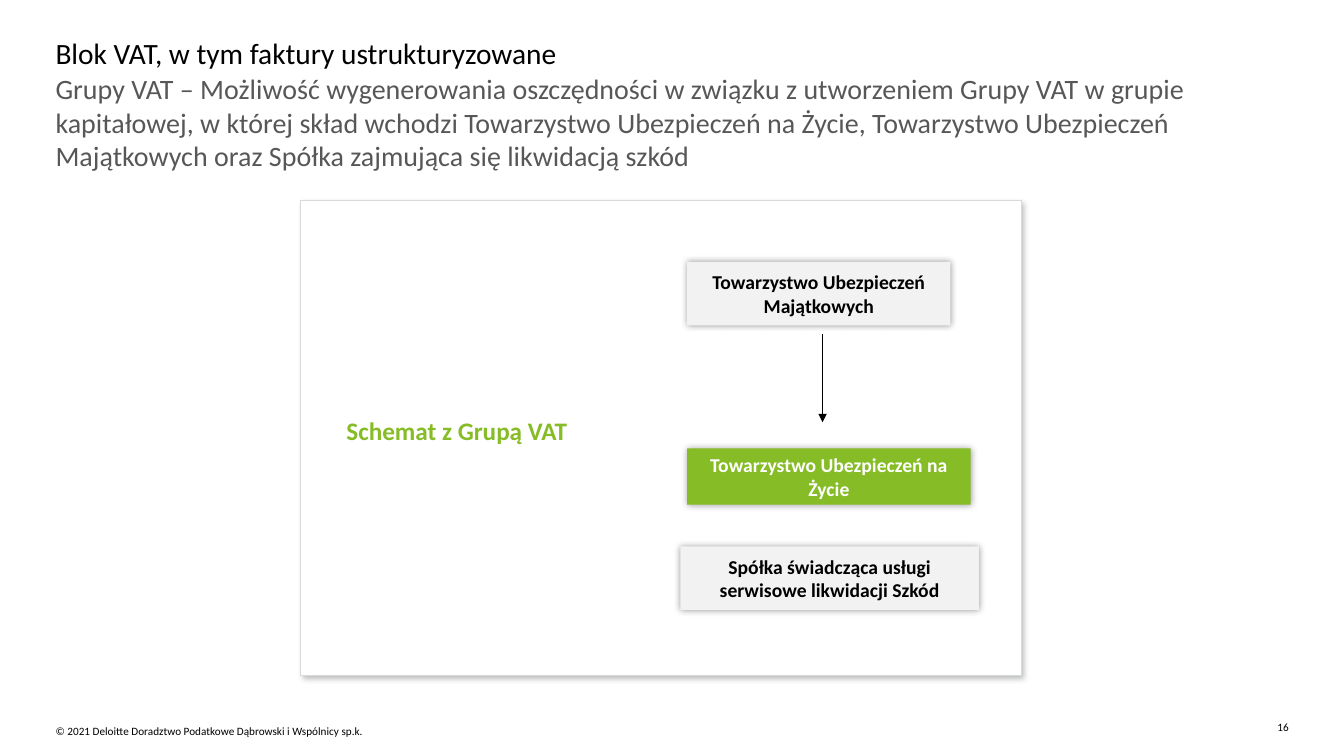
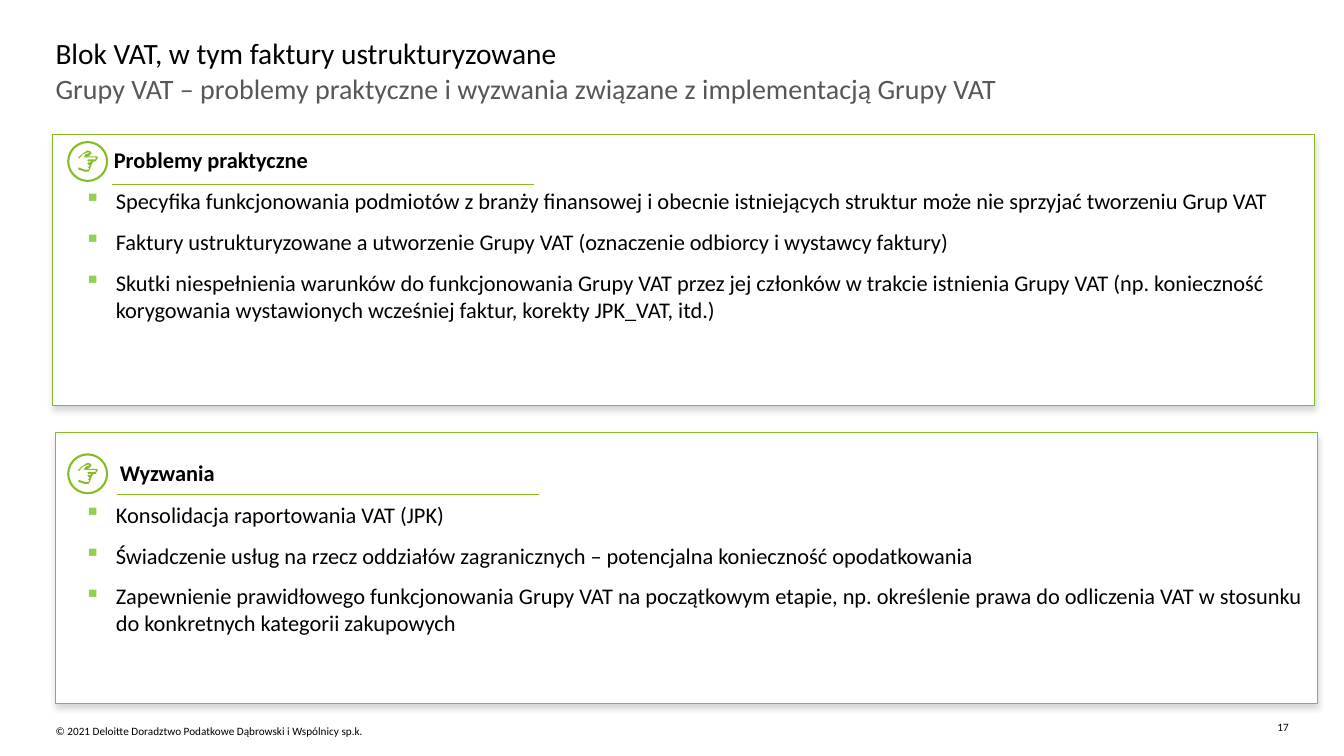
"""Build two slides about VAT groups: a structure diagram and two panels of issues."""
from dataclasses import dataclass

from lxml.etree import SubElement
from pptx import Presentation
from pptx.dml.color import RGBColor
from pptx.enum.shapes import MSO_CONNECTOR as Connector, MSO_SHAPE as Shape
from pptx.enum.text import MSO_ANCHOR as Anchor, PP_ALIGN as Align
from pptx.oxml.ns import qn
from pptx.util import Cm, Pt


@dataclass(frozen=True)
class Theme:
    font: str = "Calibri"
    black: str = "000000"
    white: str = "FFFFFF"
    gray: str = "575757"
    pale: str = "F2F2F2"
    border: str = "D9D9D9"
    green: str = "86BC25"
    bullet: str = "92D050"
    title_size: float = 21
    subtitle_size: float = 20
    label_size: float = 18
    body_size: float = 16
    node_size: float = 14
    footer_size: float = 8
    frame_shadow: tuple = ("53565A", 40, 4, 3, 45)
    node_shadow: tuple = ("000000", 40, 5, 0, 0)
    panel_shadow: tuple = ("6A6A65", 27, 4, 3, 90)


theme = Theme()
color = RGBColor.from_string


def write(box, lines, size, tint, bold=False, align=Align.LEFT, inset=0, bullets=False):
    """Fill a box with one paragraph per line, in one style."""
    frame = box.text_frame
    frame.word_wrap = True
    frame.margin_left = frame.margin_right = Cm(inset)
    frame.margin_top = frame.margin_bottom = Cm(min(inset, 0.13))
    for index, line in enumerate(lines):
        para = frame.paragraphs[0] if index == 0 else frame.add_paragraph()
        para.alignment = align
        if bullets:
            props = para._p.get_or_add_pPr()
            props.set("marL", str(Cm(0.79)))
            props.set("indent", str(-Cm(0.79)))
            SubElement(SubElement(props, qn("a:buClr")), qn("a:srgbClr"), val=theme.bullet)
            SubElement(props, qn("a:buChar"), char="▪")
            para.space_after = Pt(10)
        span = para.add_run()
        span.text = line
        span.font.name = theme.font
        span.font.size = Pt(size)
        span.font.bold = bold
        span.font.color.rgb = color(tint)


def set_effects(shape, shadow=None):
    """Replace the inherited shadow with the given one, or with none."""
    effects = SubElement(shape.element.spPr, qn("a:effectLst"))
    if shadow:
        tint, alpha, blur, distance, angle = shadow
        outer = SubElement(effects, qn("a:outerShdw"), blurRad=str(Pt(blur)),
                           dist=str(Pt(distance)), dir=str(angle * 60000),
                           algn="ctr", rotWithShape="0")
        shade = SubElement(outer, qn("a:srgbClr"), val=tint)
        SubElement(shade, qn("a:alpha"), val=str(alpha * 1000))


deck = Presentation()
deck.slide_width, deck.slide_height = Cm(33.87), Cm(19.05)

title = "Blok VAT, w tym faktury ustrukturyzowane"
subtitles = [
    "Grupy VAT – Możliwość wygenerowania oszczędności w związku z utworzeniem Grupy VAT "
    "w grupie kapitałowej, w której skład wchodzi Towarzystwo Ubezpieczeń na Życie, "
    "Towarzystwo Ubezpieczeń Majątkowych oraz Spółka zajmująca się likwidacją szkód",
    "Grupy VAT – problemy praktyczne i wyzwania związane z implementacją Grupy VAT",
]
copyright_line = "© 2021 Deloitte Doradztwo Podatkowe Dąbrowski i Wspólnicy sp.k."

pages = []
for number, subtitle in enumerate(subtitles, start=16):
    page = deck.slides.add_slide(deck.slide_layouts[6])
    pages.append(page)
    for text, left, top, width, height, size, tint, align in [
        (title, 1.4, 0.89, 31.09, 0.94, theme.title_size, theme.black, Align.LEFT),
        (subtitle, 1.4, 1.8, 31.09, 1.19, theme.subtitle_size, theme.gray, Align.LEFT),
        (copyright_line, 1.4, 18.24, 14.88, 0.56, theme.footer_size, theme.black, Align.LEFT),
        (str(number), 31.62, 18.16, 0.86, 0.33, theme.footer_size, theme.black, Align.RIGHT),
    ]:
        box = page.shapes.add_textbox(Cm(left), Cm(top), Cm(width), Cm(height))
        write(box, [text], size, tint, align=align)

diagram_page, issues_page = pages

frame_box = diagram_page.shapes.add_shape(
    Shape.RECTANGLE, Cm(7.57), Cm(5.05), Cm(18.16), Cm(11.96))
frame_box.fill.solid()
frame_box.fill.fore_color.rgb = color(theme.white)
frame_box.line.color.rgb = color(theme.border)
frame_box.line.width = Pt(0.5)
set_effects(frame_box, theme.frame_shadow)

label = diagram_page.shapes.add_textbox(Cm(8.48), Cm(10.34), Cm(8.43), Cm(1.02))
write(label, ["Schemat z Grupą VAT"], theme.label_size, theme.green, bold=True, inset=0.25)

for text, left, top, width, height, fill, tint, inset in [
    ("Towarzystwo Ubezpieczeń Majątkowych",
     17.32, 6.6, 6.63, 1.6, theme.pale, theme.black, 0.25),
    ("Towarzystwo Ubezpieczeń na Życie",
     17.32, 11.3, 7.14, 1.42, theme.green, theme.white, 0.1),
    ("Spółka świadcząca usługi serwisowe likwidacji Szkód",
     17.15, 13.77, 7.52, 1.6, theme.pale, theme.black, 0.1),
]:
    node = diagram_page.shapes.add_shape(
        Shape.RECTANGLE, Cm(left), Cm(top), Cm(width), Cm(height))
    node.fill.solid()
    node.fill.fore_color.rgb = color(fill)
    node.line.fill.background()
    set_effects(node, theme.node_shadow)
    node.text_frame.vertical_anchor = Anchor.MIDDLE
    write(node, [text], theme.node_size, tint, bold=True, align=Align.CENTER, inset=inset)

arrow = diagram_page.shapes.add_connector(
    Connector.STRAIGHT, Cm(20.73), Cm(8.41), Cm(20.73), Cm(10.64))
arrow.line.color.rgb = color(theme.black)
arrow.line.width = Pt(0.75)
SubElement(arrow.element.spPr.find(qn("a:ln")), qn("a:tailEnd"), type="triangle")
set_effects(arrow)

hand_outline = [
    (20, 8), (18, 11), (16, 11), (14, 14), (14, 15), (13, 17), (13, 18), (11, 21), (7, 21),
    (4, 20.5), (1, 19), (1, 17), (2, 17), (4, 18.5), (7, 19), (11, 19), (12, 18), (11, 17),
    (10, 16), (11, 16), (12, 16), (12, 15), (11, 14), (10, 13), (11, 12), (13, 12), (14, 11),
    (13, 11), (11, 11), (10, 10), (11, 9), (18, 9), (18, 8), (18, 7), (7, 7), (7, 6),
    (8, 4.5), (11, 3), (12, 2), (10, 2), (5, 4.5), (2, 8), (1, 8), (1, 7), (4, 3.5),
    (10, 0), (13, 1), (13.5, 3), (12, 5), (10, 6), (18, 6), (19.5, 6.5),
]
panels = [
    ("Problemy praktyczne", 1.32, 3.38, 3.56, 2.87, 3.68, 2.82, 4.65, 4.72, [
        "Specyfika funkcjonowania podmiotów z branży finansowej i obecnie istniejących "
        "struktur może nie sprzyjać tworzeniu Grup VAT",
        "Faktury ustrukturyzowane a utworzenie Grupy VAT (oznaczenie odbiorcy i wystawcy faktury)",
        "Skutki niespełnienia warunków do funkcjonowania Grupy VAT przez jej członków w trakcie "
        "istnienia Grupy VAT (np. konieczność korygowania wystawionych wcześniej faktur, "
        "korekty JPK_VAT, itd.)",
    ]),
    ("Wyzwania", 1.4, 10.9, 11.43, 3.02, 11.58, 2.95, 12.45, 12.62, [
        "Konsolidacja raportowania VAT (JPK)",
        "Świadczenie usług na rzecz oddziałów zagranicznych – potencjalna konieczność opodatkowania",
        "Zapewnienie prawidłowego funkcjonowania Grupy VAT na początkowym etapie, np. określenie "
        "prawa do odliczenia VAT w stosunku do konkretnych kategorii zakupowych",
    ]),
]
for (heading, left, top, icon_top, heading_left, heading_top,
     rule_left, rule_top, list_top, issues) in panels:
    panel = issues_page.shapes.add_shape(
        Shape.RECTANGLE, Cm(left), Cm(top), Cm(31.8), Cm(6.83))
    panel.fill.solid()
    panel.fill.fore_color.rgb = color(theme.white)
    panel.line.color.rgb = color(theme.green)
    panel.line.width = Pt(0.5)
    set_effects(panel, theme.panel_shadow)

    heading_box = issues_page.shapes.add_textbox(
        Cm(heading_left), Cm(heading_top), Cm(10), Cm(0.7))
    write(heading_box, [heading], theme.body_size, theme.black, bold=True)

    issue_list = issues_page.shapes.add_textbox(Cm(2.13), Cm(list_top), Cm(30.99), Cm(4.2))
    write(issue_list, issues, theme.body_size, theme.black, bullets=True)

    rule = issues_page.shapes.add_connector(
        Connector.STRAIGHT, Cm(rule_left), Cm(rule_top), Cm(rule_left + 10.63), Cm(rule_top))
    rule.line.color.rgb = color(theme.green)
    rule.line.width = Pt(0.75)
    set_effects(rule)

    ring = issues_page.shapes.add_shape(
        Shape.OVAL, Cm(1.72), Cm(icon_top + 0.02), Cm(0.98), Cm(0.98))
    ring.fill.background()
    ring.line.color.rgb = color(theme.green)
    ring.line.width = Pt(1.5)
    set_effects(ring)

    builder = issues_page.shapes.build_freeform(*hand_outline[0], scale=Cm(2.54) / 100)
    builder.add_line_segments(hand_outline[1:], close=True)
    hand = builder.convert_to_shape(Cm(1.95), Cm(icon_top + 0.23))
    hand.fill.solid()
    hand.fill.fore_color.rgb = color(theme.green)
    hand.line.fill.background()
    set_effects(hand)

deck.save("out.pptx")
